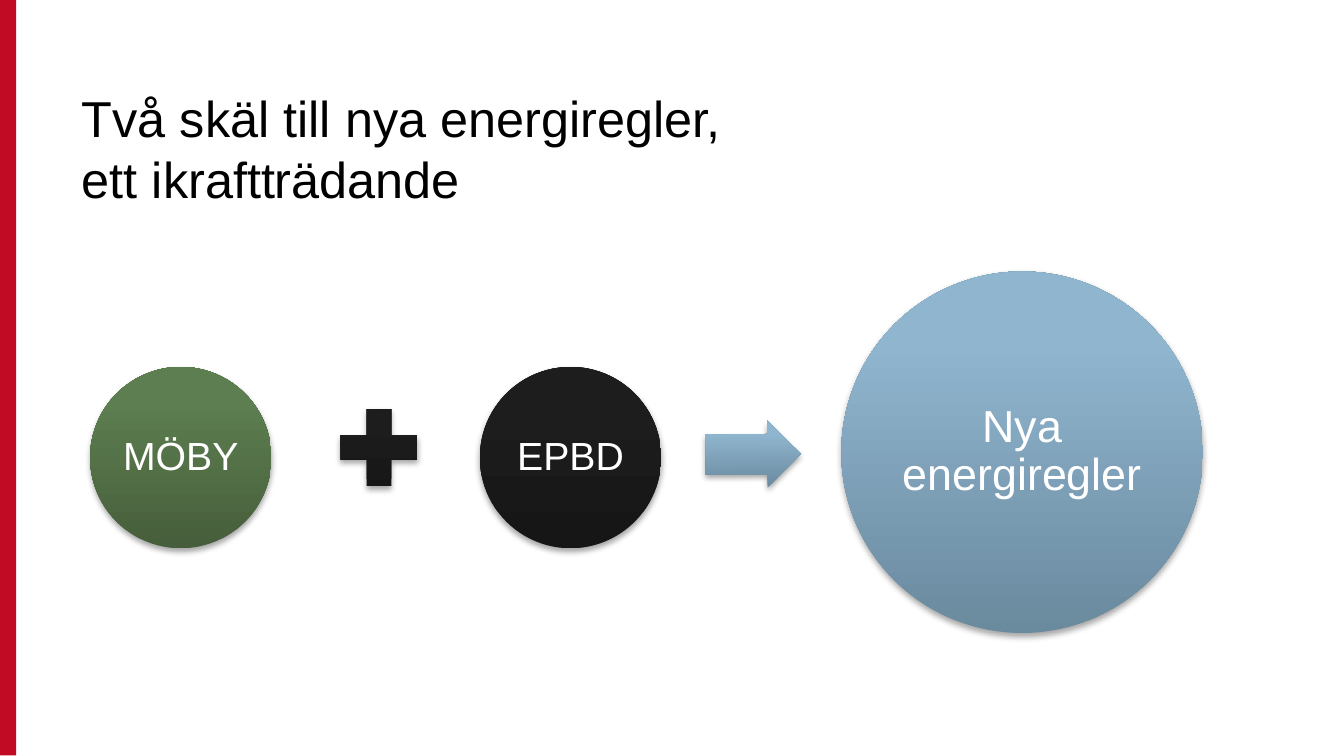
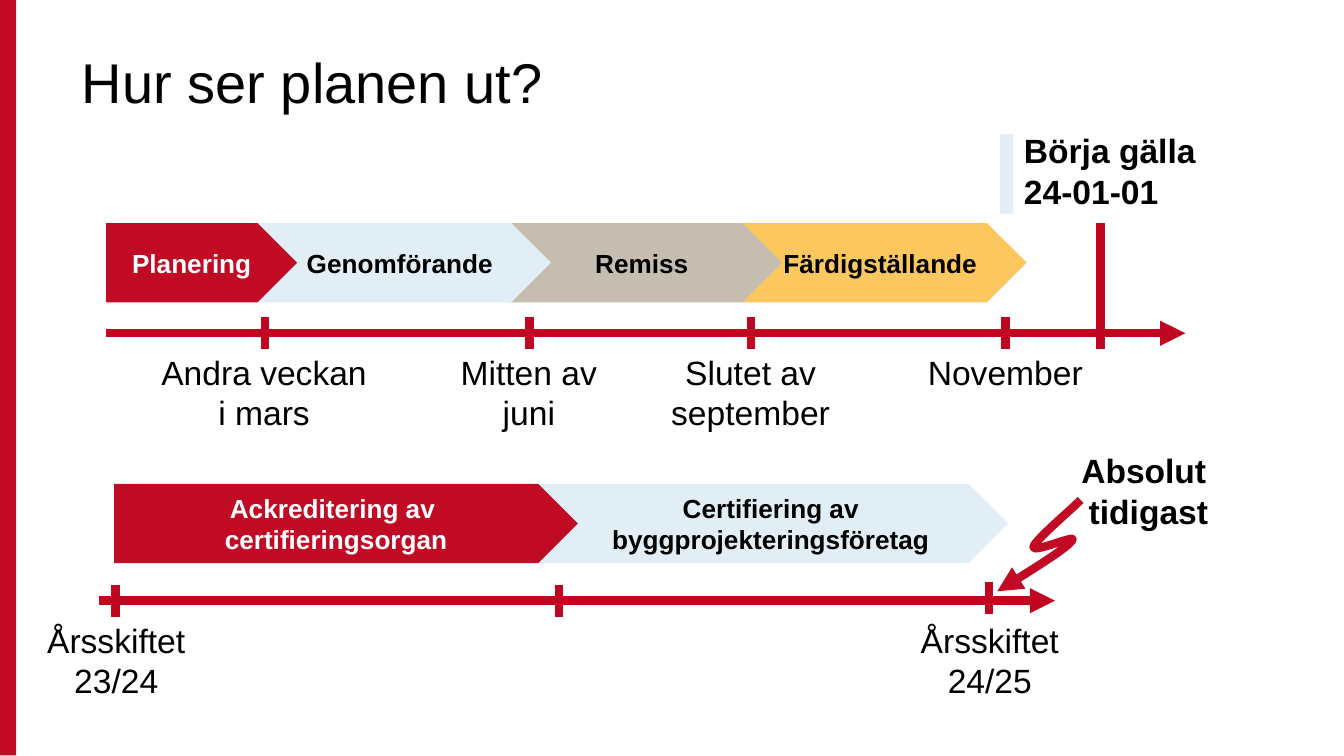
from lxml import etree
from pptx import Presentation
from pptx.dml.color import RGBColor
from pptx.enum.shapes import MSO_CONNECTOR, MSO_SHAPE
from pptx.enum.text import MSO_ANCHOR, MSO_AUTO_SIZE, PP_ALIGN
from pptx.oxml.ns import qn
from pptx.util import Emu, Pt

SCALE = 9144
FONT = "Arial"
RED, LINE, ICE = "C10B25", "C10621", "E2EEF5"
SAND, GOLD = "C5BEB0", "FDC75F"
BLACK, WHITE = "000000", "FFFFFF"
GREEN_FADE = ("465E3B", "5D7E50")
DARK_FADE = ("161616", "1D1D1D")
BLUE_FADE = ("6A8A9E", "8FB5CF")
OVAL, PLUS, ARROW = MSO_SHAPE.OVAL, MSO_SHAPE.MATH_PLUS, MSO_SHAPE.RIGHT_ARROW
PLATE, RECT = MSO_SHAPE.PENTAGON, MSO_SHAPE.RECTANGLE
STRAIGHT = MSO_CONNECTOR.STRAIGHT
LEFT, CENTER = PP_ALIGN.LEFT, PP_ALIGN.CENTER
TOP, MIDDLE = MSO_ANCHOR.TOP, MSO_ANCHOR.MIDDLE
FIXED, GROW = MSO_AUTO_SIZE.NONE, MSO_AUTO_SIZE.SHAPE_TO_FIT_TEXT


def px(n):
    """Turn px into EMU."""
    return Emu(n * SCALE)


def color(code):
    """Turn a hex string into a colour."""
    return RGBColor.from_string(code)


def add_run(para, text, size, ink, bold=False):
    """Add one styled run to a paragraph."""
    run = para.add_run()
    run.text = text
    font = run.font
    font.name, font.size, font.bold = FONT, Pt(size), bold
    font.color.rgb = color(ink)


def write(frame, text, size, ink, bold=False, align=CENTER, space=None):
    """Write each line of text as a paragraph."""
    for i, line in enumerate(text.split("\n")):
        para = frame.add_paragraph() if i else frame.paragraphs[0]
        para.alignment = align
        para.line_spacing = space
        add_run(para, line, size, ink, bold)


def inset(frame, left, top, right, bottom):
    """Set the four margins of a text frame."""
    frame.margin_left, frame.margin_top = px(left), px(top)
    frame.margin_right, frame.margin_bottom = px(right), px(bottom)


def add_title(slide, top, lines, size):
    """Place and fill the title."""
    title = slide.shapes.title
    title.left, title.top, title.width, title.height = map(px, (51, top, 728, 89))
    frame = title.text_frame
    frame.auto_size, frame.vertical_anchor = FIXED, TOP
    para = frame.paragraphs[0]
    para.alignment = LEFT
    for i, line in enumerate(lines):
        if i:
            para.add_line_break()
        add_run(para, line, size, BLACK)


def add_form(slide, kind, box, fill=None):
    """Add a preset shape without outline or shadow."""
    form = slide.shapes.add_shape(kind, *map(px, box))
    form.shadow.inherit = False
    form.line.fill.background()
    if fill:
        form.fill.solid()
        form.fill.fore_color.rgb = color(fill)
    return form


def add_glow(slide, kind, box, fade):
    """Add a shape with an upward fade and a soft shadow."""
    form = add_form(slide, kind, box)
    form.fill.gradient()
    form.fill.gradient_angle = 90
    for stop, place, code in zip(form.fill.gradient_stops, (0, 0.8), fade):
        stop.position = place
        stop.color.rgb = color(code)
    effects = form.element.spPr.find(qn("a:effectLst"))
    shade = etree.SubElement(effects, qn("a:outerShdw"), blurRad="40000",
                             dist="23000", dir="5400000", rotWithShape="0")
    ink = etree.SubElement(shade, qn("a:srgbClr"), val=BLACK)
    etree.SubElement(ink, qn("a:alpha"), val="35000")
    return form


def add_disc(slide, left, top, side, pad, text, size, fade):
    """Add a round shape with a centred label."""
    add_glow(slide, OVAL, (left, top, side, side), fade)
    inner = side - 2 * pad
    box = slide.shapes.add_textbox(*map(px, (left + pad, top + pad, inner, inner)))
    frame = box.text_frame
    frame.word_wrap, frame.vertical_anchor = True, MIDDLE
    inset(frame, 3, 3, 3, 3)
    write(frame, text, size, WHITE, space=0.9)


def add_plate(slide, left, top, width, text, fill):
    """Add one step of a process band."""
    form = add_form(slide, PLATE, (left, top, width, 59), fill)
    frame = form.text_frame
    frame.word_wrap, frame.vertical_anchor = True, MIDDLE
    first = fill == RED
    inset(frame, 10, 5, 10 if first else 0, 5)
    write(frame, text, 14, WHITE if first else BLACK, True)


def add_note(slide, box, text, bold=False, align=CENTER, wrap=True):
    """Add a text box that fits its text."""
    note = slide.shapes.add_textbox(*map(px, box))
    frame = note.text_frame
    frame.word_wrap, frame.auto_size = wrap, GROW
    write(frame, text, 18, BLACK, bold, align)


def style_line(line, ink, head=False):
    """Give a line its colour, width and arrowhead."""
    line.color.rgb = color(ink)
    line.width = Pt(4.5)
    if head:
        etree.SubElement(line._get_or_add_ln(), qn("a:tailEnd"), type="triangle")


def add_line(slide, x1, y1, x2, y2, head=False):
    """Add a straight line."""
    link = slide.shapes.add_connector(STRAIGHT, *map(px, (x1, y1, x2, y2)))
    style_line(link.line, LINE, head)
    etree.SubElement(link.element.spPr, qn("a:effectLst"))


def add_curve(slide, start, points):
    """Add a curved arrow, three points to each bend."""
    pen = slide.shapes.build_freeform(*start, scale=SCALE)
    pen.add_line_segments(points, close=False)
    curve = pen.convert_to_shape()
    curve.shadow.inherit = False
    curve.fill.background()
    style_line(curve.line, RED, True)
    track = next(curve.element.iter(qn("a:path")))
    steps = track.findall(qn("a:lnTo"))
    for i in range(0, len(steps), 3):
        bend = etree.SubElement(track, qn("a:cubicBezTo"))
        for step in steps[i:i + 3]:
            bend.append(step[0])
            track.remove(step)


def add_band(prs, slide):
    """Put the red side band on the master."""
    band = add_form(slide, RECT, (0, 0, 12, 562), RED)
    prs.slide_master.shapes.element.insert(2, band.element)


def fill_reasons(slide):
    """Build the slide on the two reasons."""
    add_title(slide, 60, ("Två skäl till nya energiregler, ", "ett ikraftträdande"), 27)
    add_disc(slide, 357, 273, 135, 20, "EPBD", 21, DARK_FADE)
    add_glow(slide, PLUS, (243, 294, 78, 78), DARK_FADE)
    add_disc(slide, 67, 273, 135, 20, "MÖBY", 21, GREEN_FADE)
    arrow = add_glow(slide, ARROW, (525, 313, 71, 50), BLUE_FADE)
    arrow.adjustments[0], arrow.adjustments[1] = 0.6, 0.5
    arrow.rotation = 359.6
    add_disc(slide, 626, 202, 269, 39, "Nya energiregler", 24, BLUE_FADE)


def fill_plan(slide):
    """Build the slide with the two time lines."""
    add_title(slide, 30, ("Hur ser planen ut?",), 30)
    add_line(slide, 79, 248, 882, 248, True)
    for left, width, text, fill in (
        (551, 213, "Färdigställande", GOLD),
        (378, 204, "Remiss", SAND),
        (190, 220, "Genomförande", ICE),
        (79, 142, "Planering", RED),
    ):
        add_plate(slide, left, 166, width, text, fill)
    for x in (197, 394, 559, 748):
        add_line(slide, x, 236, x, 260)
    for left, width, height, text in (
        (110, 173, 71, "Andra veckan i mars"),
        (311, 165, 71, "Mitten av juni"),
        (472, 173, 71, "Slutet av september"),
        (677, 142, 40, "November"),
    ):
        add_note(slide, (left, 257, width, height), text)
    add_line(slide, 819, 166, 819, 260)
    add_note(slide, (752, 92, 169, 71), "Börja gälla 24-01-01", True, LEFT)
    add_form(slide, RECT, (744, 100, 10, 59), ICE)

    add_line(slide, 74, 447, 785, 447, True)
    for x, y in ((416, 435), (86, 435), (736, 433)):
        add_line(slide, x, y, x, y + 24)
    for left, text in ((10, "Årsskiftet 23/24"), (660, "Årsskiftet 24/25")):
        add_note(slide, (left, 456, 153, 71), text)
    add_plate(slide, 402, 360, 348, "Certifiering av byggprojekteringsföretag", ICE)
    add_plate(slide, 85, 360, 345, "Ackreditering av \ncertifieringsorgan", RED)
    add_note(slide, (794, 330, 121, 71), "Absolut \ntidigast", True, wrap=False)
    add_curve(slide, (804, 372), (
        (794, 382), (770, 402), (769, 407),
        (768, 412), (802, 397), (798, 402),
        (793, 408), (768, 424), (742, 440),
    ))


def main():
    """Build and save the slides."""
    prs = Presentation()
    prs.slide_width, prs.slide_height = px(1000), Emu(5143500)
    layout = prs.slide_layouts[5]
    first, second = (prs.slides.add_slide(layout) for _ in range(2))
    add_band(prs, first)
    fill_reasons(first)
    fill_plan(second)
    prs.save("out.pptx")


if __name__ == "__main__":
    main()
